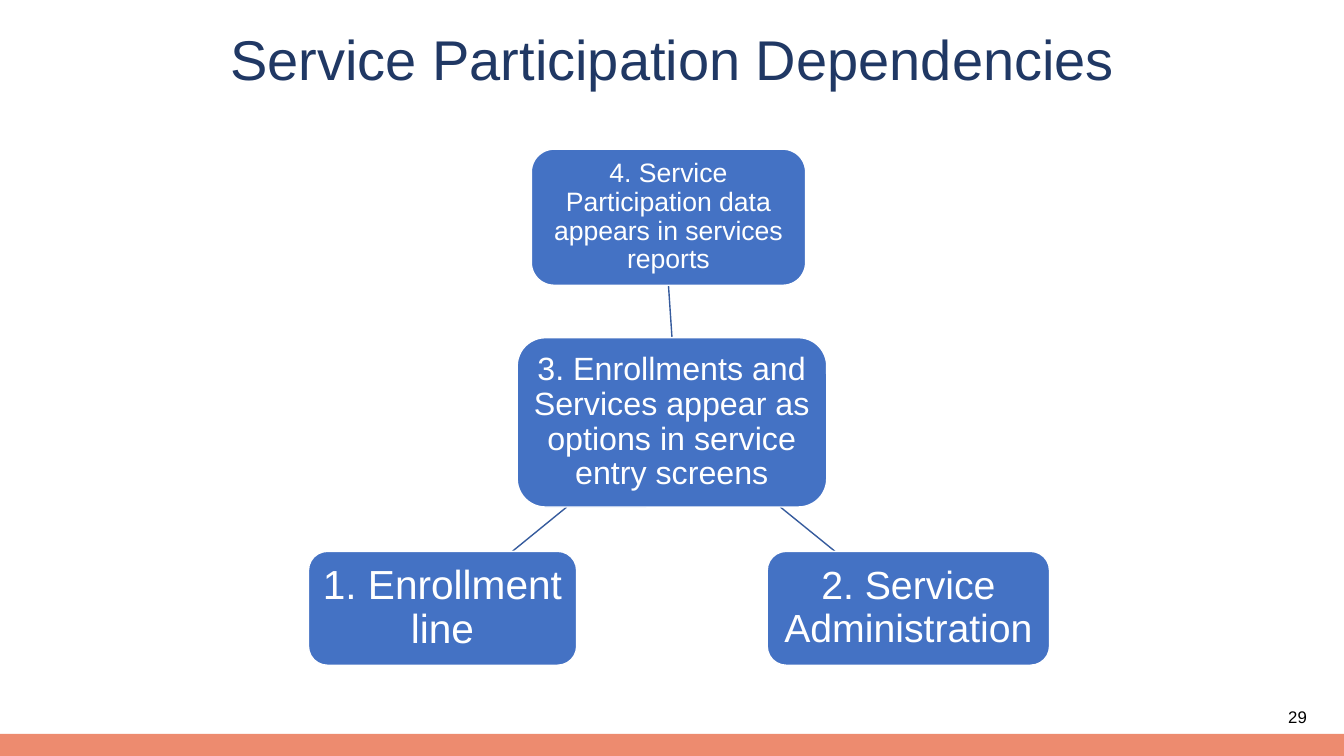
from lxml.etree import SubElement
from pptx import Presentation
from pptx.dml.color import RGBColor
from pptx.enum.shapes import MSO_CONNECTOR as Link, MSO_SHAPE as Shape
from pptx.enum.text import MSO_ANCHOR as Anchor, PP_ALIGN as Align
from pptx.oxml.ns import qn
from pptx.util import Inches, Pt

WIDTH, HEIGHT = 13.33, 7.5
NAVY, BLUE, LINK_BLUE = "203864", "4472C4", "365B9D"
CORAL, WHITE, BLACK = "ED8B6F", "FFFFFF", "000000"

# Steps: left, top, width, height, inset, text size, wording
STEPS = {
    "screens": (5.13, 3.35, 3.07, 1.68, 0.06, 23,
                "3. Enrollments and Services appear as options in service entry screens"),
    "reports": (5.27, 1.48, 2.72, 1.35, 0.05, 19,
                "4. Service Participation data appears in services reports"),
    "administration": (7.61, 5.47, 2.8, 1.13, 0.08, 28, "2. Service Administration"),
    "enrollment": (3.06, 5.47, 2.66, 1.13, 0.08, 29, "1. Enrollment line"),
}
# Links: upper step, share of its width, lower step, share of its width
LINKS = [
    ("reports", 0.5, "screens", 0.5),
    ("screens", 0.85, "administration", 0.24),
    ("screens", 0.16, "enrollment", 0.76),
]


def color(hex_string):
    return RGBColor.from_string(hex_string)


def inches(*lengths):
    return [Inches(length) for length in lengths]


def write(frame, wording, size, hue, align=Align.CENTER, spacing=None, inset=0.0):
    frame.word_wrap = True
    frame.vertical_anchor = Anchor.MIDDLE
    frame.margin_left = frame.margin_right = Inches(inset)
    frame.margin_top = frame.margin_bottom = Inches(inset)
    paragraph = frame.paragraphs[0]
    paragraph.alignment = align
    paragraph.line_spacing = spacing
    run = paragraph.add_run()
    run.text = wording
    run.font.name, run.font.size = "Arial", Pt(size)
    run.font.color.rgb = color(hue)


def add_block(slide, kind, box, fill):
    block = slide.shapes.add_shape(kind, *inches(*box))
    block.shadow.inherit = False
    block.fill.solid()
    block.fill.fore_color.rgb = color(fill)
    block.line.fill.background()
    return block


def add_footer(slide, left, top, width, height):
    add_block(slide, Shape.RECTANGLE, (left, top, width, height), CORAL)
    number = slide.shapes.add_textbox(*inches(left + width - 0.74, top - 0.31, 0.47, 0.29))
    write(number.text_frame, "29", 12, BLACK, Align.RIGHT, inset=0.1)
    number.text_frame.margin_top = number.text_frame.margin_bottom = 0


def add_title(slide, *box):
    title = slide.shapes.title
    title.left, title.top, title.width, title.height = inches(*box)
    write(title.text_frame, "Service Participation Dependencies", 40, NAVY, spacing=0.9)


def add_step(slide, box, inset, size, wording):
    step = add_block(slide, Shape.ROUNDED_RECTANGLE, box, BLUE)
    step.line.color.rgb = color(WHITE)
    step.line.width = Pt(1)
    write(step.text_frame, wording, size, WHITE, spacing=0.9, inset=inset)


def add_link(slide, upper, upper_share, lower, lower_share):
    left, top, width, height = STEPS[upper][:4]
    start = left + width * upper_share, top + height
    left, top, width, height = STEPS[lower][:4]
    end = left + width * lower_share, top
    link = slide.shapes.add_connector(Link.STRAIGHT, *inches(*start, *end))
    link.line.color.rgb = color(LINK_BLUE)
    link.line.width = Pt(1)
    SubElement(link._element.spPr, qn("a:effectLst"))


def add_diagram(slide):
    for link in LINKS:
        add_link(slide, *link)
    for *box, inset, size, wording in STEPS.values():
        add_step(slide, box, inset, size, wording)


def main():
    deck = Presentation()
    deck.slide_width, deck.slide_height = inches(WIDTH, HEIGHT)
    slide = deck.slides.add_slide(deck.slide_layouts[5])
    add_footer(slide, 0, HEIGHT - 0.22, WIDTH, 0.22)
    add_title(slide, 0, 0, WIDTH, 1.24)
    add_diagram(slide)
    deck.save("out.pptx")


if __name__ == "__main__":
    main()
